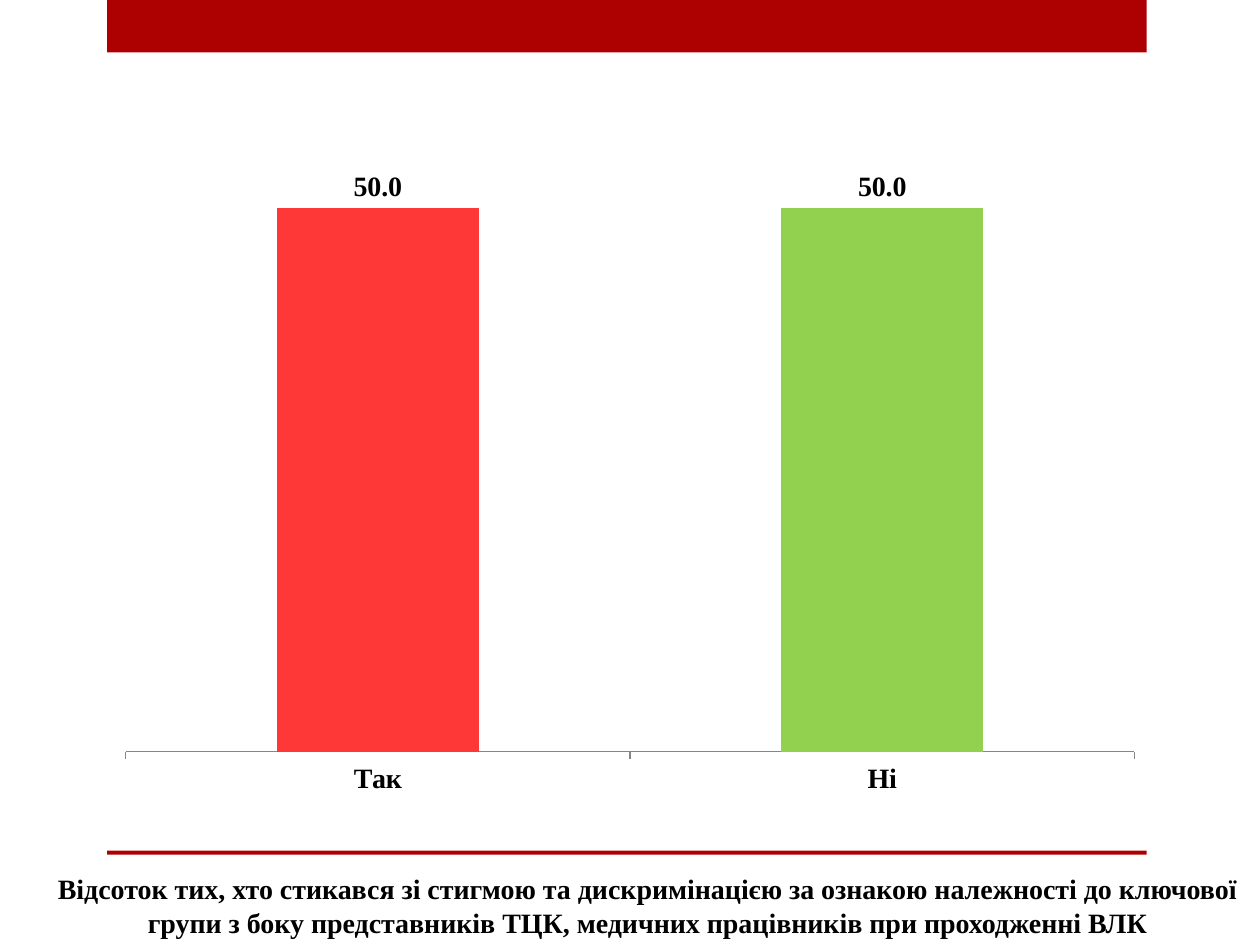
from pptx import Presentation
from pptx.chart.data import CategoryChartData
from pptx.dml.color import RGBColor
from pptx.enum import chart as ch, shapes, text
from pptx.util import Pt

TITLE = ("Відсоток тих, хто стикався зі стигмою та дискримінацією за ознакою "
         "належності до ключової групи з боку представників ТЦК, медичних "
         "працівників при проходженні ВЛК")
FONT = "Times New Roman"
BLACK = RGBColor(0x00, 0x00, 0x00)
GRAY = RGBColor(0x86, 0x86, 0x86)
DARK = RGBColor(0xAD, 0x01, 0x01)
RED = RGBColor(0xFE, 0x37, 0x37)
GREEN = RGBColor(0x92, 0xD0, 0x50)

ANSWERS = [("Так", 50, RED), ("Ні", 50, GREEN)]
BANDS = [(0, 30), (486, 2.4)]  # top, height
FORMAT = "###0.0"


def style(font):
    font.name, font.size, font.bold = FONT, Pt(16), True
    font.color.rgb = BLACK


def add_bands(slide):
    for top, height in BANDS:
        band = slide.shapes.add_shape(shapes.MSO_SHAPE.RECTANGLE,
                                      Pt(61.2), Pt(top), Pt(594), Pt(height))
        band.shadow.inherit = False
        band.fill.solid()
        band.fill.fore_color.rgb = DARK
        band.line.fill.background()


def set_title(slide):
    title = slide.shapes.title
    title.left, title.top = Pt(20.2), Pt(489.6)
    title.width, title.height = Pt(699.8), Pt(50.4)
    frame = title.text_frame
    frame.text = TITLE
    frame.word_wrap = True
    frame.auto_size = text.MSO_AUTO_SIZE.NONE
    frame.vertical_anchor = text.MSO_ANCHOR.BOTTOM
    para = frame.paragraphs[0]
    para.alignment = text.PP_ALIGN.CENTER
    style(para.runs[0].font)


def add_chart(slide):
    data = CategoryChartData(number_format=FORMAT)
    data.categories = [name for name, _, _ in ANSWERS]
    data.add_series("Series 1", [value for _, value, _ in ANSWERS])
    chart = slide.shapes.add_chart(ch.XL_CHART_TYPE.COLUMN_CLUSTERED,
                                   Pt(59.8), Pt(48.2), Pt(600.5), Pt(414.7),
                                   data).chart
    style(chart.font)
    chart.has_title = False
    chart.has_legend = False

    axis = chart.category_axis
    axis.major_tick_mark = ch.XL_TICK_MARK.OUTSIDE
    axis.format.line.color.rgb = GRAY
    scale = chart.value_axis
    scale.visible = False
    scale.has_major_gridlines = False
    scale.minimum_scale, scale.maximum_scale = 0, 60

    plot = chart.plots[0]
    plot.gap_width = 150
    plot.vary_by_categories = False
    plot.has_data_labels = True
    labels = plot.data_labels
    labels.show_value = True
    labels.number_format = FORMAT
    labels.number_format_is_linked = False
    labels.position = ch.XL_LABEL_POSITION.OUTSIDE_END
    style(labels.font)

    series = plot.series[0]
    series.format.fill.solid()
    series.format.fill.fore_color.rgb = DARK
    for i, (_, _, color) in enumerate(ANSWERS):
        fill = series.points[i].format.fill
        fill.solid()
        fill.fore_color.rgb = color


def main():
    deck = Presentation()
    deck.slide_width, deck.slide_height = Pt(720), Pt(540)
    slide = deck.slides.add_slide(deck.slide_layouts[5])
    add_bands(slide)
    set_title(slide)
    add_chart(slide)
    deck.save("out.pptx")


if __name__ == "__main__":
    main()
